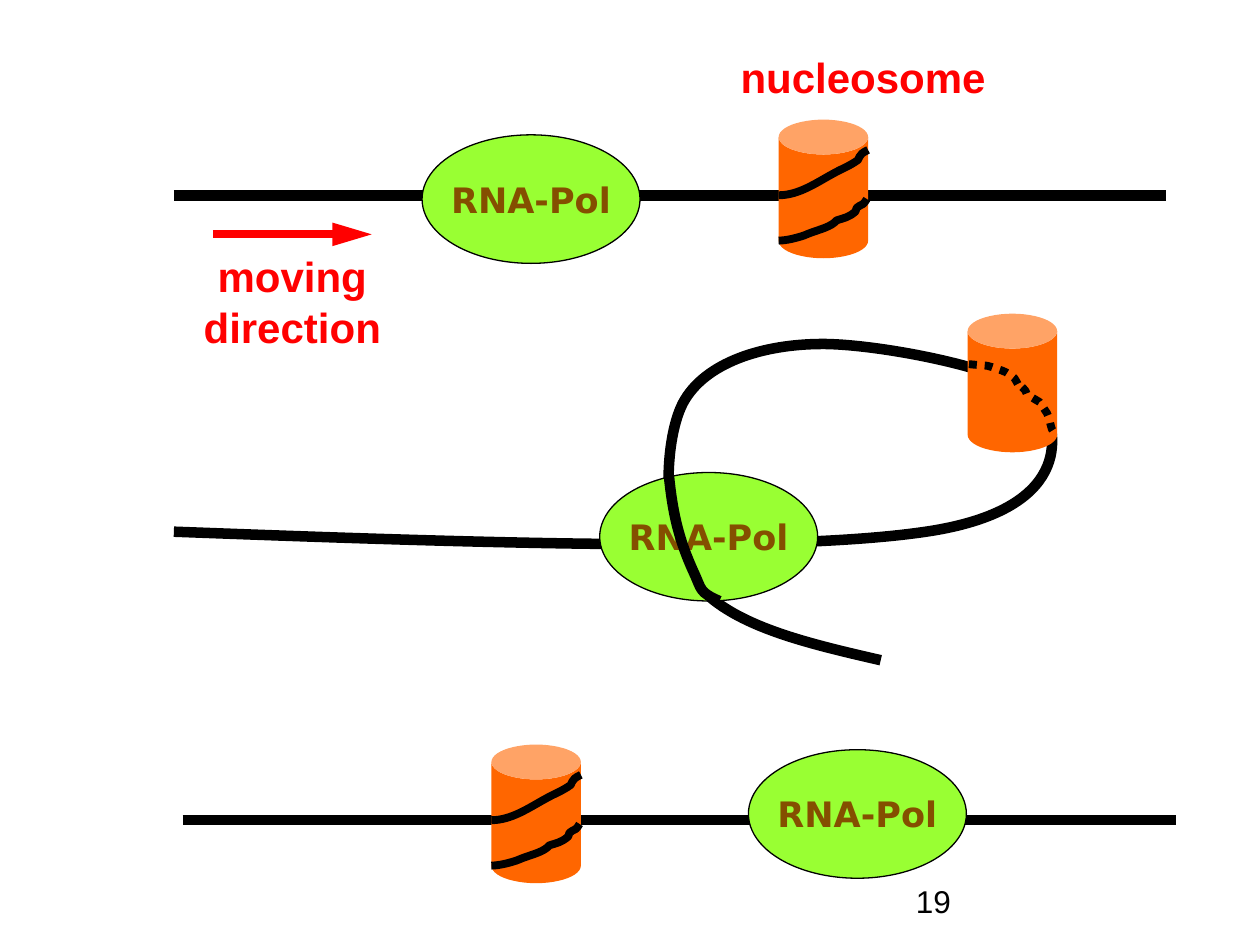
from lxml.etree import SubElement as Sub
from pptx import Presentation
from pptx.dml.color import RGBColor as RGB
from pptx.enum.dml import MSO_LINE as Dash
from pptx.enum.shapes import MSO_CONNECTOR as Link, MSO_SHAPE as Kind
from pptx.enum.text import MSO_ANCHOR as Anchor, PP_ALIGN as Align
from pptx.oxml.ns import qn
from pptx.util import Inches, Pt


class Theme:
    dna = RGB(0, 0, 0)
    enzyme = RGB(0x99, 0xFF, 0x33)
    name = RGB(0x84, 0x4F, 0x00)
    core = RGB(0xFF, 0x66, 0x00)
    note = RGB(0xFF, 0, 0)
    sans, bold = "Arial", "DejaVu Sans"
    label, tag, page = 24, 20, 18
    thick, thin, edge = 6, 4.5, 0.75


# Content: places in inches; a curve is its start, then two handles and an end per piece
STRANDS = [(1.38, 1.55, 9.25), (1.45, 6.51, 9.33)]  # left, y, right
ENZYMES = [(3.35, 1.07), (4.76, 3.75), (5.94, 5.95)]
ENZYME = (1.73, 1.02)
CORES = [(7.68, 2.49, False), (3.9, 5.91, True), (6.18, 0.95, True)]  # left, top, wrapped
CORE = (0.71, 1.1)
LABELS = [
    ("nucleosome", (5.55, 0.36, 2.6, 0.5), Theme.label, Theme.note, True),
    ("moving direction", (1.22, 1.94, 2.2, 0.9), Theme.label, Theme.note, True),
    ("19", (7.17, 6.95, 2.33, 0.4), Theme.page, Theme.dna, False),
]
ARROW = (1.69, 1.86, 2.95)
LOOP = [(1.38, 4.22), (3.79, 4.31), (6.2, 4.39), (7.35, 4.22),
        (8.5, 4.05), (8.41, 3.45), (8.27, 3.2),
        (8.14, 2.95), (7, 2.73), (6.53, 2.73),
        (6.05, 2.73), (5.59, 2.88), (5.42, 3.2),
        (5.26, 3.51), (5.25, 4.27), (5.51, 4.61),
        (5.78, 4.96), (6.38, 5.1), (6.99, 5.24)]
CROSS = [(5.31, 3.78), (5.34, 4.08), (5.39, 4.29), (5.51, 4.55),
         (5.57, 4.68), (5.55, 4.7), (5.71, 4.77)]
HIDDEN = [(7.69, 2.89), (7.89, 2.91), (7.8, 2.89), (7.95, 2.94),
          (7.99, 2.95), (8.05, 3), (8.05, 3),
          (8.13, 3.13), (8.02, 2.98), (8.12, 3.08),
          (8.14, 3.09), (8.14, 3.11), (8.15, 3.13),
          (8.18, 3.15), (8.25, 3.19), (8.25, 3.19),
          (8.27, 3.22), (8.29, 3.25), (8.31, 3.28),
          (8.34, 3.33), (8.33, 3.4), (8.37, 3.44)]
# Two DNA turns, measured from the top left of a core
TURNS = [
    [(0.7, 0.63), (0.69, 0.65), (0.68, 0.66), (0.67, 0.67),
     (0.65, 0.68), (0.63, 0.69), (0.62, 0.7),
     (0.61, 0.71), (0.62, 0.72), (0.61, 0.73),
     (0.55, 0.78), (0.52, 0.78), (0.46, 0.8),
     (0.42, 0.85), (0.33, 0.87), (0.25, 0.9),
     (0.23, 0.9), (0.22, 0.92), (0.2, 0.92),
     (0.14, 0.94), (0.06, 0.96), (0, 0.96)],
    [(0.71, 0.24), (0.69, 0.25), (0.67, 0.26), (0.66, 0.27),
     (0.64, 0.28), (0.64, 0.31), (0.63, 0.32),
     (0.56, 0.37), (0.5, 0.39), (0.43, 0.43),
     (0.3, 0.5), (0.16, 0.6), (0, 0.6)],
]

deck = Presentation()
deck.slide_width, deck.slide_height = Inches(10), Inches(7.5)
shapes = deck.slides.add_slide(deck.slide_layouts[6]).shapes


def stroke(item, color, width):
    item.line.color.rgb = color
    item.line.width = Pt(width)


def straight(left, y, right, color, width):
    line = shapes.add_connector(Link.STRAIGHT, *map(Inches, (left, y, right, y)))
    stroke(line, color, width)
    Sub(line.element.spPr, qn("a:effectLst"))
    return line


def curve(points, width, left=0, top=0):
    spots = [(Inches(left + x), Inches(top + y)) for x, y in points]
    pen = shapes.build_freeform(*spots[0])
    pen.add_line_segments(spots[3::3], close=False)
    shape = pen.convert_to_shape()
    shape.shadow.inherit = False
    shape.fill.background()
    stroke(shape, Theme.dna, width)
    # Turn each straight piece into a cubic curve
    path = shape.element.find(".//" + qn("a:path"))
    for i, piece in enumerate(path.findall(qn("a:lnTo"))):
        path.remove(piece)
        bend = Sub(path, qn("a:cubicBezTo"))
        for x, y in spots[3 * i + 1:3 * i + 4]:
            Sub(bend, qn("a:pt"), x=str(x - shape.left), y=str(y - shape.top))
    return shape


def solid(kind, place, color):
    shape = shapes.add_shape(kind, *map(Inches, place))
    shape.shadow.inherit = False
    shape.fill.solid()
    shape.fill.fore_color.rgb = color
    return shape


def write(frame, text, face, size, color, bold, align):
    frame.text = text
    para = frame.paragraphs[0]
    para.alignment = align
    font = para.font
    font.name, font.size, font.bold = face, Pt(size), bold
    font.color.rgb = color


# DNA strands
for strand in STRANDS:
    straight(*strand, Theme.dna, Theme.thick)
curve(LOOP, Theme.thick)

# Polymerases
for spot in ENZYMES:
    oval = solid(Kind.OVAL, spot + ENZYME, Theme.enzyme)
    stroke(oval, Theme.dna, Theme.edge)
    frame = oval.text_frame
    frame.word_wrap = False
    frame.vertical_anchor = Anchor.MIDDLE
    write(frame, "RNA-Pol", Theme.bold, Theme.tag, Theme.name, True, Align.CENTER)

# Nucleosome cores with their DNA turns
for left, top, wrapped in CORES:
    can = solid(Kind.CAN, (left, top) + CORE, Theme.core)
    can.adjustments[0] = 0.39
    can.line.fill.background()
    for turn in TURNS if wrapped else []:
        curve(turn, Theme.thin, left, top)

# DNA behind the lifted core and across the polymerase
curve(HIDDEN, Theme.thin).line.dash_style = Dash.ROUND_DOT
curve(CROSS, Theme.thick)

# Direction arrow
arrow = straight(*ARROW, Theme.note, Theme.thin)
Sub(arrow.line._get_or_add_ln(), qn("a:tailEnd"), type="triangle", w="med", len="lg")

# Labels and page number
for text, place, size, color, bold in LABELS:
    frame = shapes.add_textbox(*map(Inches, place)).text_frame
    frame.word_wrap = True
    align = Align.CENTER if bold else Align.LEFT
    write(frame, text, Theme.sans, size, color, bold, align)

deck.save("out.pptx")
